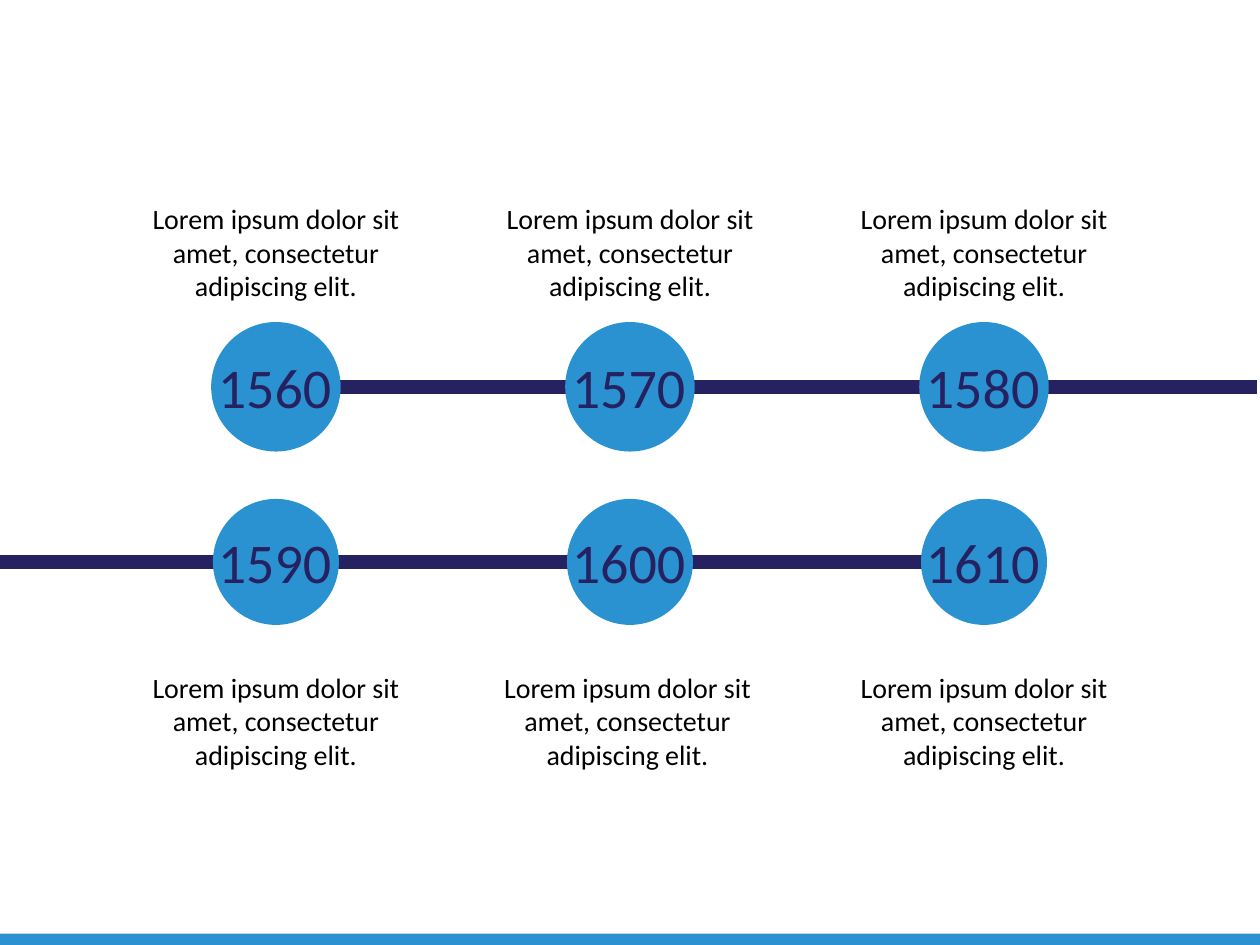
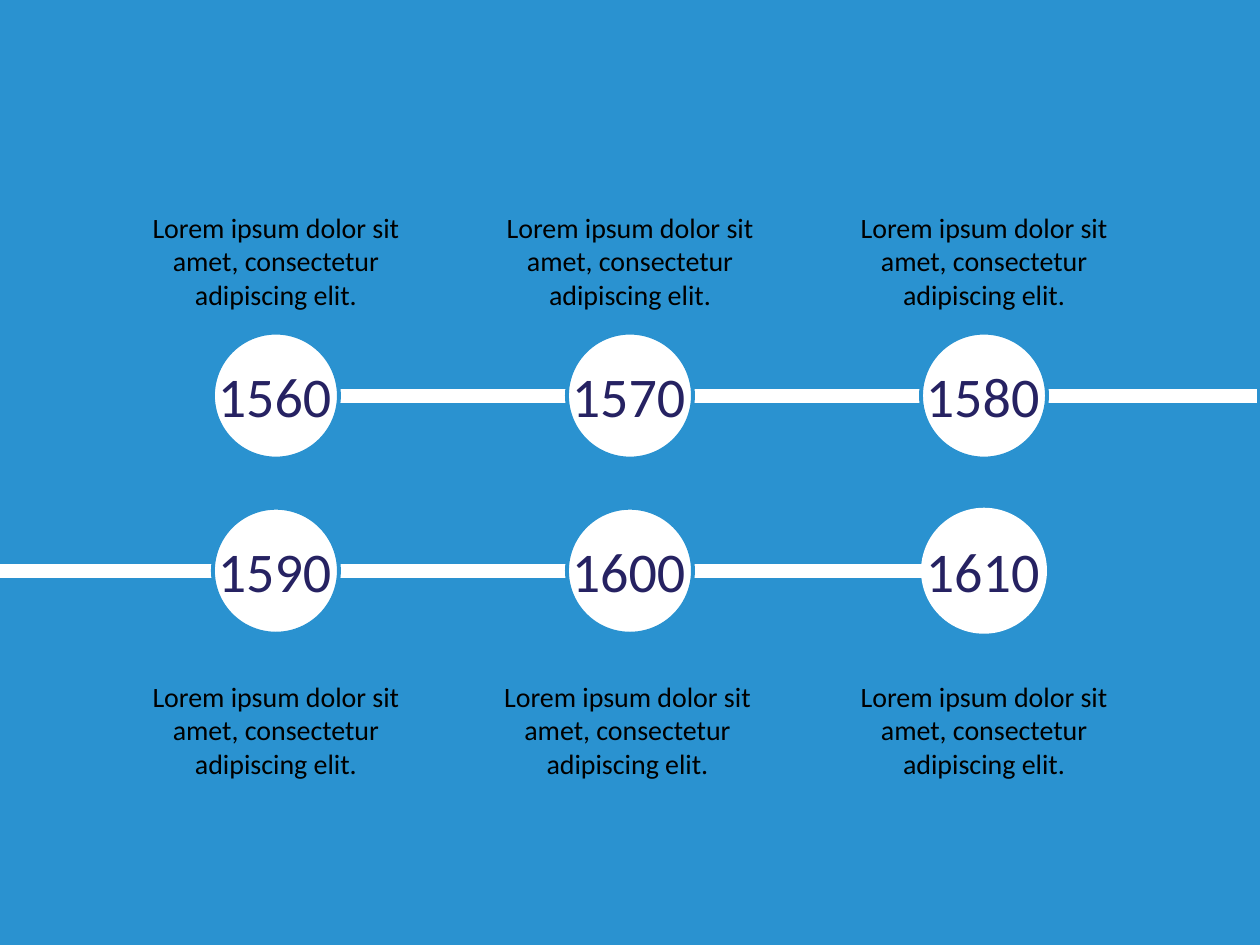
from pptx import Presentation
from pptx.dml.color import RGBColor
from pptx.enum.shapes import MSO_CONNECTOR, MSO_SHAPE
from pptx.enum.text import MSO_AUTO_SIZE, PP_ALIGN
from pptx.oxml.ns import qn
from pptx.util import Inches, Pt

STRAIGHT = MSO_CONNECTOR.STRAIGHT
OVAL, RECT = MSO_SHAPE.OVAL, MSO_SHAPE.RECTANGLE
LEFT, CENTER = PP_ALIGN.LEFT, PP_ALIGN.CENTER
FIT_SHAPE = MSO_AUTO_SIZE.SHAPE_TO_FIT_TEXT

COLORS = {"blue": "2A92D0", "navy": "262262", "white": "FFFFFF", "black": "000000"}
FONT = "Calibri"
SLIDE_W, SLIDE_H = 10, 7.5
BLEED = 0.03

COLUMN_STEP = 2.81
COLUMNS = [SLIDE_W / 2 + i * COLUMN_STEP for i in (-1, 0, 1)]
ROW_STEP = 1.39
CIRCLE = 1
YEAR_W, YEAR_H, YEAR_RISE = 1.12, 0.64, 0.32
CAPTION_W, CAPTION_H = 2.32, 0.91
CAPTION = "Lorem ipsum dolor sit amet, consectetur adipiscing elit."

# Each row: years, line ends, caption offset from the line, caption centres
ROWS = [
    (("1560", "1570", "1580"), (COLUMNS[0], 9.98), -1.52, COLUMNS),
    (("1590", "1600", "1610"), (0, COLUMNS[-1]), 0.81,
     [COLUMNS[0], COLUMNS[1] - 0.02, COLUMNS[2]]),
]


def rgb(name):
    return RGBColor.from_string(COLORS[name])


def add_shape(slide, kind, box, fill, line_width=0):
    """Add a filled shape, with a blue outline if line_width is given."""
    sp = slide.shapes.add_shape(kind, *map(Inches, box))
    sp.shadow.inherit = False
    sp.fill.solid()
    sp.fill.fore_color.rgb = rgb(fill)
    if line_width:
        sp.line.color.rgb = rgb("blue")
        sp.line.width = Pt(line_width)
    else:
        sp.line.fill.background()


def add_line(slide, x1, x2, y, color):
    line = slide.shapes.add_connector(STRAIGHT, *map(Inches, (x1, y, x2, y)))
    line.line.color.rgb = rgb(color)
    line.line.width = Pt(8)
    sp_pr = line._element.spPr
    sp_pr.append(sp_pr.makeelement(qn("a:effectLst"), {}))


def add_text(slide, text, box, size, color, align, wrap):
    tf = slide.shapes.add_textbox(*map(Inches, box)).text_frame
    tf.word_wrap = wrap
    tf.auto_size = FIT_SHAPE
    p = tf.paragraphs[0]
    p.alignment = align
    r = p.add_run()
    r.text = text
    r.font.name = FONT
    r.font.size = Pt(size)
    r.font.color.rgb = rgb(color)


def add_timeline(slide, first_y, line_color, circle_color, outlines):
    """Draw both rows; outlines maps a year to the width of its circle's outline."""
    rows = [(first_y + i * ROW_STEP, *row) for i, row in enumerate(ROWS)]
    for y, _, ends, _, _ in rows:
        add_line(slide, *ends, y, line_color)
    for y, years, _, _, _ in rows:
        for x, year in zip(COLUMNS, years):
            add_shape(slide, OVAL, (x - CIRCLE / 2, y - CIRCLE / 2, CIRCLE, CIRCLE),
                      circle_color, outlines.get(year, 0))
            add_text(slide, year, (x - YEAR_W / 2, y - YEAR_RISE, YEAR_W, YEAR_H),
                     32, "navy", LEFT, False)
    for y, _, _, offset, centres in rows:
        for x in centres:
            add_text(slide, CAPTION,
                     (x - CAPTION_W / 2, y + offset, CAPTION_W, CAPTION_H),
                     16, "black", CENTER, True)


def main():
    prs = Presentation()
    prs.slide_width, prs.slide_height = Inches(SLIDE_W), Inches(SLIDE_H)
    blank = prs.slide_layouts[6]
    upper, lower = ROWS[0][0], ROWS[1][0]

    light = prs.slides.add_slide(blank)
    add_timeline(light, 3.07, "navy", "blue", dict.fromkeys(upper, 2))
    add_shape(light, RECT, (-BLEED, 7.41, SLIDE_W + BLEED, 0.12), "blue")

    blue = prs.slides.add_slide(blank)
    add_shape(blue, RECT, (-BLEED, -BLEED, SLIDE_W + BLEED, SLIDE_H + BLEED), "blue", 2)
    add_timeline(blue, 3.14, "white", "white", dict.fromkeys(upper + lower[:2], 2.25))

    prs.save("out.pptx")


if __name__ == "__main__":
    main()
